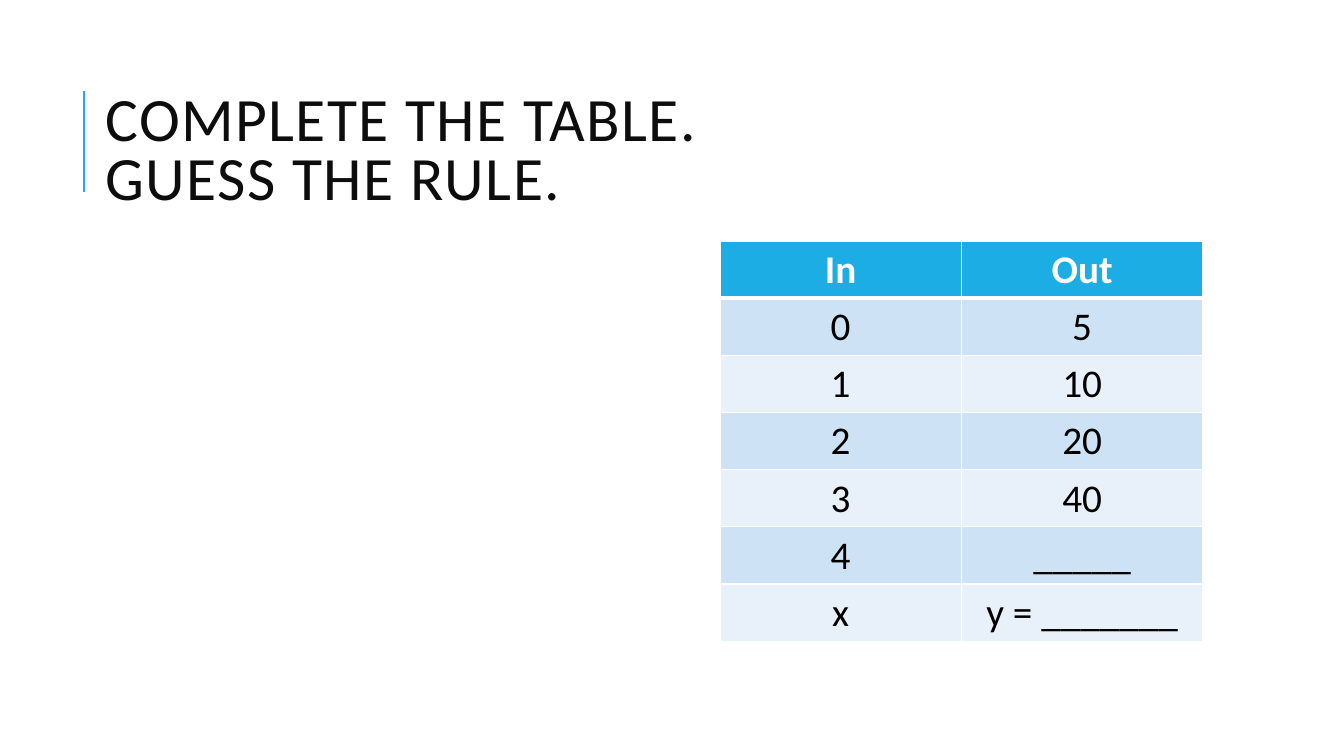
from lxml import etree
from pptx import Presentation
from pptx.dml.color import RGBColor
from pptx.enum.shapes import MSO_CONNECTOR
from pptx.enum.text import MSO_ANCHOR, PP_ALIGN
from pptx.oxml.ns import qn
from pptx.util import Inches, Pt

STRAIGHT = MSO_CONNECTOR.STRAIGHT
MIDDLE = MSO_ANCHOR.MIDDLE
CENTER = PP_ALIGN.CENTER

FONT = "Calibri"
WHITE = RGBColor(0xFF, 0xFF, 0xFF)
BLACK = RGBColor(0x00, 0x00, 0x00)
INK = RGBColor(0x0D, 0x0D, 0x0D)
ACCENT = RGBColor(0x1C, 0xAD, 0xE4)
BANDS = (RGBColor(0xE8, 0xF1, 0xFA), RGBColor(0xCD, 0xE3, 0xF5))

TITLE = "COMPLETE THE TABLE.\vGUESS THE RULE."
ROWS = [
    ("In", "Out"),
    ("0", "5"),
    ("1", "10"),
    ("2", "20"),
    ("3", "40"),
    ("4", "_____"),
    ("x", "y = _______"),
]


def style_runs(p, size, color, bold=False):
    for r in p.runs:
        r.font.name = FONT
        r.font.size = Pt(size)
        r.font.bold = bold
        r.font.color.rgb = color


def set_borders(cell, bottom_width):
    """Draw white borders, which must precede the fill in the cell properties."""
    tcPr = cell._tc.get_or_add_tcPr()
    widths = {"a:lnL": 1, "a:lnR": 1, "a:lnT": 1, "a:lnB": bottom_width}
    for i, (tag, width) in enumerate(widths.items()):
        ln = etree.Element(qn(tag), w=str(Pt(width)))
        fill = etree.SubElement(ln, qn("a:solidFill"))
        etree.SubElement(fill, qn("a:srgbClr"), val=str(WHITE))
        tcPr.insert(i, ln)


def add_title(slide, left, top, width, height):
    # Accent rule to the left of the title
    x = left - Inches(0.12)
    y = top + Inches(0.2)
    rule = slide.shapes.add_connector(STRAIGHT, x, y + Inches(1), x, y)
    rule.line.color.rgb = ACCENT
    rule.line.width = Pt(1.5)
    etree.SubElement(rule._element.spPr, qn("a:effectLst"))

    # Title text
    tf = slide.shapes.add_textbox(left, top, width, height).text_frame
    tf.word_wrap = True
    tf.vertical_anchor = MIDDLE
    p = tf.paragraphs[0]
    p.text = TITLE
    p.line_spacing = 0.8
    style_runs(p, 44, INK)
    for r in p.runs:
        r.font._element.set("spc", "100")


def add_in_out_table(slide, left, top, width, height):
    frame = slide.shapes.add_table(len(ROWS), len(ROWS[0]), left, top, width, height)
    for i, row in enumerate(ROWS):
        header = i == 0
        for j, text in enumerate(row):
            cell = frame.table.cell(i, j)
            cell.fill.solid()
            cell.fill.fore_color.rgb = ACCENT if header else BANDS[i % 2]
            # The rule under the header is heavier, on both sides of the edge
            set_borders(cell, 3 if header else 1)
            if i == 1:
                cell._tc.tcPr.find(qn("a:lnT")).set("w", str(Pt(3)))
            p = cell.text_frame.paragraphs[0]
            p.text = text
            p.alignment = CENTER
            style_runs(p, 28, WHITE if header else BLACK, header)


def main():
    prs = Presentation()
    prs.slide_width = Inches(13.33)
    prs.slide_height = Inches(7.5)
    slide = prs.slides.add_slide(prs.slide_layouts[6])
    add_title(slide, Inches(0.95), Inches(0.7), Inches(10.63), Inches(1.64))
    add_in_out_table(slide, Inches(7.14), Inches(2.39), Inches(4.79), Inches(3.97))
    prs.save("out.pptx")


if __name__ == "__main__":
    main()
